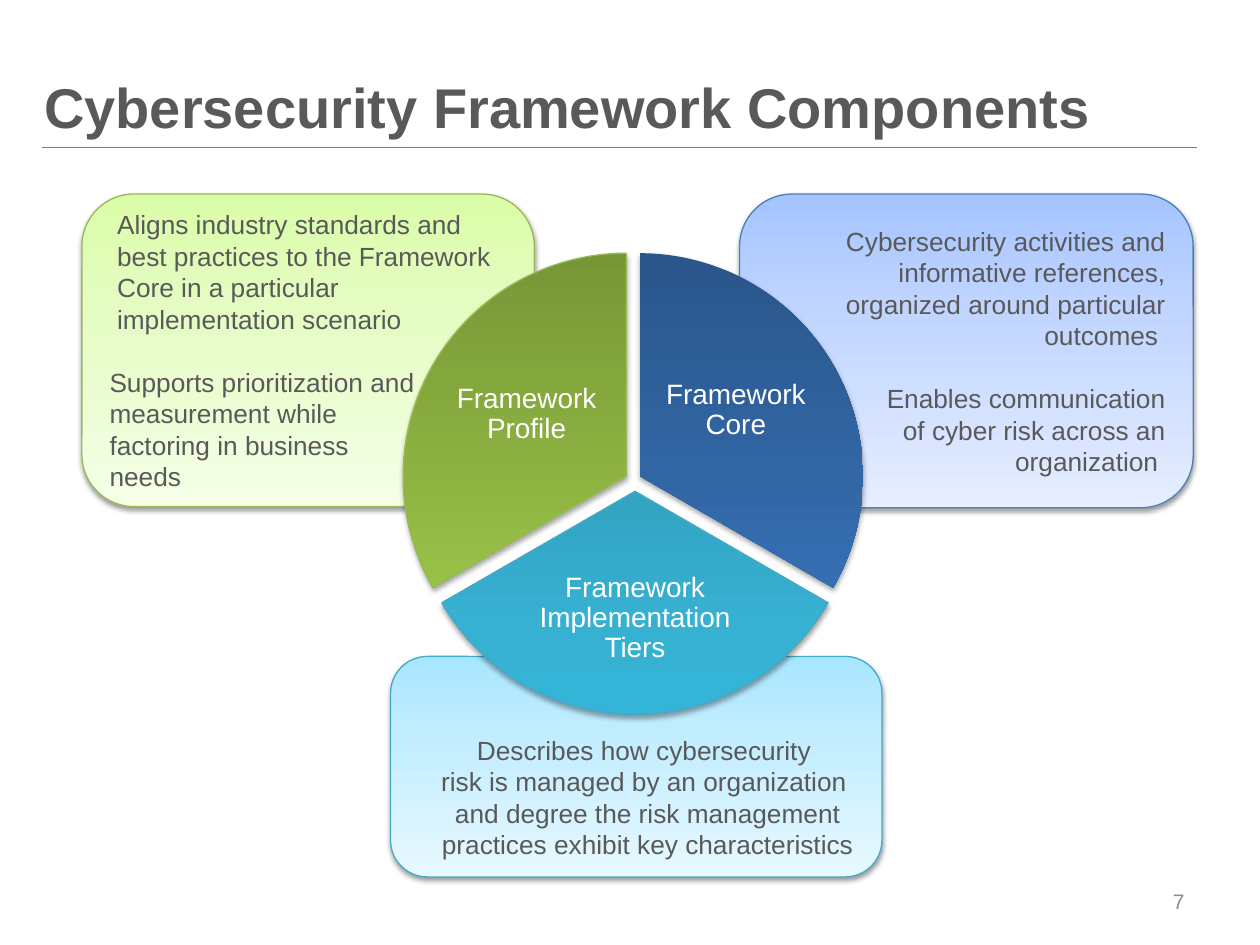
from lxml import etree
from pptx import Presentation
from pptx.dml.color import RGBColor
from pptx.enum.shapes import MSO_CONNECTOR, MSO_SHAPE
from pptx.enum.text import MSO_ANCHOR, PP_ALIGN
from pptx.oxml.ns import qn
from pptx.util import Inches, Pt

ROUNDED, PIE = MSO_SHAPE.ROUNDED_RECTANGLE, MSO_SHAPE.PIE
LEFT, CENTER, RIGHT = PP_ALIGN.LEFT, PP_ALIGN.CENTER, PP_ALIGN.RIGHT
MIDDLE, BOTTOM = MSO_ANCHOR.MIDDLE, MSO_ANCHOR.BOTTOM
COLORS = {
    "text": "595959", "number": "8C8C8C", "white": "FFFFFF", "rule": "77933C",
    "green line": "98B955", "blue line": "4B7EBC", "teal line": "46AAC5",
}
# Gradients run from bottom to top: (position in percent, color)
GRADIENTS = {
    "pale teal": [(0, "A7E6FF"), (35, "C1EDFF"), (100, "E7F8FF")],
    "pale green": [(0, "DAFDA7"), (35, "E4FCC2"), (100, "F5FFE7")],
    "pale blue": [(0, "A4C4FF"), (35, "BFD4FF"), (100, "E6EEFF")],
    "blue": [(0, "2A568B"), (80, "3770B5"), (100, "3570B8")],
    "teal": [(0, "2A88A2"), (80, "37B1D2"), (100, "34B4D6")],
    "green": [(0, "779737"), (80, "9BC348"), (100, "9DC746")],
}


def add_gradient_shape(kind, box, gradient, line, shadow_alpha, shadow_distance):
    shape = slide.shapes.add_shape(kind, *[Inches(value) for value in box])
    shape.fill.gradient()
    shape.fill.gradient_angle = 270
    stops = shape._element.spPr.find(qn("a:gradFill")).find(qn("a:gsLst"))
    for stop in list(stops):
        stops.remove(stop)
    for position, color in GRADIENTS[gradient]:
        stop = etree.SubElement(stops, qn("a:gs"), pos=str(position * 1000))
        etree.SubElement(stop, qn("a:srgbClr"), val=color)
    if line:
        shape.line.color.rgb = RGBColor.from_string(COLORS[line])
        shape.line.width = Pt(0.75)
    else:
        shape.line.fill.background()
    shape.shadow.inherit = False
    shadow = etree.SubElement(
        shape._element.spPr.find(qn("a:effectLst")), qn("a:outerShdw"),
        blurRad=str(Pt(3.1)), dist=str(Pt(shadow_distance)), dir="5400000", rotWithShape="0")
    color = etree.SubElement(shadow, qn("a:srgbClr"), val="000000")
    etree.SubElement(color, qn("a:alpha"), val=str(shadow_alpha * 1000))
    return shape


def format_paragraph(paragraph, text, size, color, alignment):
    paragraph.text = text
    paragraph.alignment = alignment
    paragraph.font.name = "Arial"
    paragraph.font.size = Pt(size)
    paragraph.font.color.rgb = RGBColor.from_string(COLORS[color])


presentation = Presentation()
presentation.slide_width, presentation.slide_height = Inches(10), Inches(7.5)
slide = presentation.slides.add_slide(presentation.slide_layouts[5])

# Title and rule
title = slide.shapes.title
title.left, title.top, title.width, title.height = [Inches(v) for v in (0.25, 0.33, 9.25, 0.83)]
title.text_frame.vertical_anchor = BOTTOM
paragraph = title.text_frame.paragraphs[0]
format_paragraph(paragraph, "Cybersecurity Framework Components", 32, "text", LEFT)
paragraph.font.bold = True
paragraph.line_spacing = Pt(26)
rule = slide.shapes.add_connector(
    MSO_CONNECTOR.STRAIGHT, Inches(0.33), Inches(1.17), Inches(9.5), Inches(1.17))
rule.line.color.rgb = RGBColor.from_string(COLORS["rule"])
rule.line.width = Pt(0.75)
etree.SubElement(rule._element.spPr, qn("a:effectLst"))

# Description panels: paragraphs are (text, left margin, first-line indent)
panels = [
    ((3.1, 5.21, 3.9, 1.75), "pale teal", "teal line", BOTTOM, CENTER, [
        ("Describes how cybersecurity \nrisk is managed by an organization \n"
         "and degree the risk management practices exhibit key characteristics", 0.18, 0)]),
    ((0.65, 1.54, 3.59, 2.48), "pale green", "green line", MIDDLE, LEFT, [
        ("Aligns industry standards and best practices to the Framework Core "
         "in a particular implementation scenario", 0.06, 0),
        ("Supports prioritization and measurement while \nfactoring in business \nneeds", 0, 0)]),
    ((5.87, 1.54, 3.6, 2.49), "pale blue", "blue line", MIDDLE, RIGHT, [
        ("Cybersecurity activities and informative references, "
         "organized around particular outcomes ", 0.24, -0.24),
        ("Enables communication of cyber risk across an organization ", 0.94, 0)]),
]
for box, gradient, line, anchor, alignment, texts in panels:
    panel = add_gradient_shape(ROUNDED, box, gradient, line, 38, 1.6)
    frame = panel.text_frame
    frame.word_wrap = True
    frame.vertical_anchor = anchor
    for index, (text, margin, indent) in enumerate(texts):
        paragraph = frame.add_paragraph() if index else frame.paragraphs[0]
        format_paragraph(paragraph, text, 15, "text", alignment)
        properties = paragraph._p.get_or_add_pPr()
        properties.set("marL", str(Inches(margin)))
        properties.set("indent", str(Inches(indent)))
        if index:
            paragraph.space_before = Pt(18)

# Pie slices with their labels; angles in degrees
slices = [
    ((3.31, 2.01), 270, 30, "blue", None, "Framework Core", (5.24, 2.67, 1.2, 1.18)),
    ((3.27, 2.13), 30, 150, "teal", "teal line",
     "Framework Implementation Tiers", (4.24, 4.36, 1.6, 1.1)),
    ((3.2, 2.01), 150, 270, "green", "green line", "Framework Profile", (3.58, 2.7, 1.2, 1.18)),
]
for corner, start, end, gradient, line, text, label_box in slices:
    pie = add_gradient_shape(PIE, (*corner, 3.54, 3.54), gradient, line, 35, 1.8)
    pie.adjustments[0], pie.adjustments[1] = start * 0.6, end * 0.6
    label = slide.shapes.add_textbox(*[Inches(value) for value in label_box])
    frame = label.text_frame
    frame.word_wrap = True
    frame.vertical_anchor = MIDDLE
    frame.margin_left = frame.margin_right = Inches(0.02)
    frame.margin_top = frame.margin_bottom = Inches(0.02)
    format_paragraph(frame.paragraphs[0], text, 16, "white", CENTER)
    frame.paragraphs[0].line_spacing = 0.9

# Slide number
number = slide.shapes.add_textbox(Inches(7.17), Inches(6.95), Inches(2.33), Inches(0.4))
number.text_frame.word_wrap = True
number.text_frame.vertical_anchor = MIDDLE
format_paragraph(number.text_frame.paragraphs[0], "7", 12, "number", RIGHT)

presentation.save("out.pptx")
